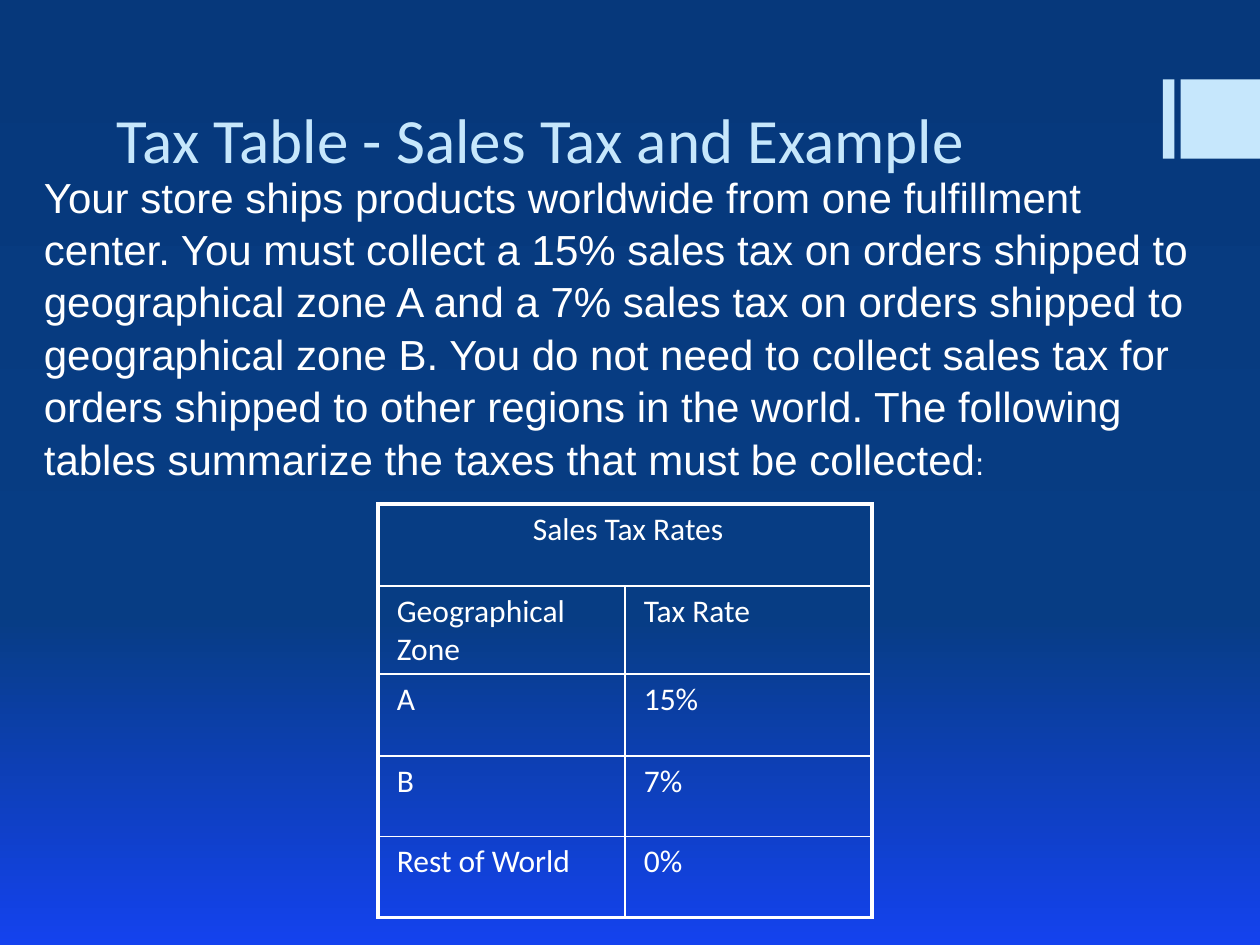
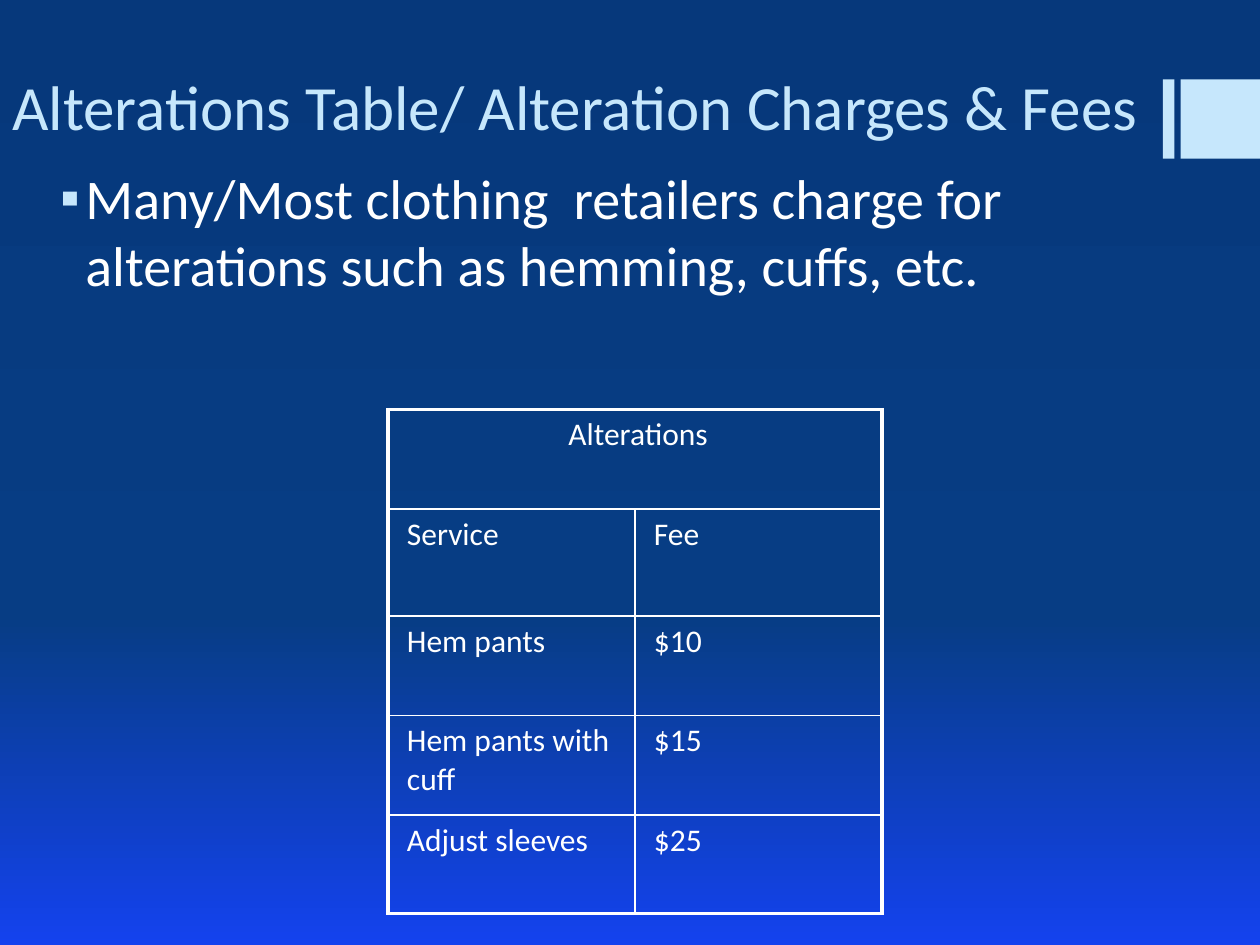
from dataclasses import dataclass

from lxml.etree import SubElement
from pptx import Presentation
from pptx.dml.color import RGBColor as Rgb
from pptx.enum.shapes import MSO_SHAPE as Preset
from pptx.enum.text import MSO_ANCHOR as Anchor, PP_ALIGN as Align
from pptx.oxml import parse_xml
from pptx.oxml.ns import nsdecls, qn
from pptx.util import Inches, Pt


@dataclass(frozen=True)
class Theme:
    """Colours, fonts, type sizes and line widths of the deck."""
    accent: str = "C6E7FC"
    text: str = "FFFFFF"
    gradient: tuple = ((0, "06387B"), (65, "073D84"), (100, "1442EE"))
    heading_font: str = "Calibri"
    prose_font: str = "Arial"
    title_size: int = 36
    bullet_size: int = 32
    prose_size: int = 24
    table_size: int = 18
    outer_border: float = 2.25
    inner_border: float = 1


THEME = Theme()


def style_run(run, size, color=THEME.text, font=THEME.heading_font):
    """Give a run its font, size and colour."""
    run.font.name = font
    run.font.size = Pt(size)
    run.font.color.rgb = Rgb.from_string(color)


def paint_background(slide):
    """Fill the slide with the vertical three-stop gradient."""
    fill = slide.background.fill
    fill.gradient()
    fill.gradient_angle = 270
    stops = next(slide.element.iter(qn("a:gsLst")))
    for stop in list(stops):
        stops.remove(stop)
    for percent, color in THEME.gradient:
        stop = SubElement(stops, qn("a:gs"), pos=str(percent * 1000))
        SubElement(stop, qn("a:srgbClr"), val=color)


def add_accent_bars(slide):
    """Draw the narrow and the wide bar at the right edge."""
    for left, width in ((9.23, 0.09), (9.37, 0.63)):
        bar = slide.shapes.add_shape(Preset.RECTANGLE, Inches(left), Inches(0.63),
                                     Inches(width), Inches(0.63))
        bar.shadow.inherit = False
        bar.fill.solid()
        bar.fill.fore_color.rgb = Rgb.from_string(THEME.accent)
        bar.line.fill.background()


def add_text_frame(slide, area, anchor):
    """Add a wrapping text box and return its frame."""
    frame = slide.shapes.add_textbox(*map(Inches, area)).text_frame
    frame.word_wrap = True
    frame.vertical_anchor = anchor
    return frame


def start_slide(deck, title, title_area):
    """Add a slide with background, bars and title."""
    slide = deck.slides.add_slide(deck.slide_layouts[6])
    paint_background(slide)
    add_accent_bars(slide)
    frame = add_text_frame(slide, title_area, Anchor.BOTTOM)
    frame.margin_bottom = Inches(0.02)
    frame.text = title
    style_run(frame.paragraphs[0].runs[0], THEME.title_size, THEME.accent)
    return slide


def add_prose(slide, area, sentence, ending):
    """Add body prose with a smaller closing mark."""
    paragraph = add_text_frame(slide, area, Anchor.MIDDLE).paragraphs[0]
    paragraph.line_spacing = 1.04
    for words, size in ((sentence, THEME.prose_size), (ending, THEME.table_size)):
        run = paragraph.add_run()
        run.text = words
        style_run(run, size, font=THEME.prose_font)


def add_bullet(slide, area, statement):
    """Add a statement with a square accent bullet."""
    frame = add_text_frame(slide, area, Anchor.TOP)
    frame.text = statement
    paragraph = frame.paragraphs[0]
    layout = paragraph._p.get_or_add_pPr()
    layout.set("marL", str(Inches(0.25)))
    layout.set("indent", str(Inches(-0.2)))
    color = SubElement(layout, qn("a:buClr"))
    SubElement(color, qn("a:srgbClr"), val=THEME.accent)
    SubElement(layout, qn("a:buFont"), typeface="Arial")
    SubElement(layout, qn("a:buChar"), char="▪")
    style_run(paragraph.runs[0], THEME.bullet_size)


def set_borders(cell, outer_sides):
    """Draw all four cell borders, heavier on the outer sides."""
    properties = cell._tc.get_or_add_tcPr()
    for position, side in enumerate("LRTB"):
        weight = THEME.outer_border if side in outer_sides else THEME.inner_border
        border = parse_xml(
            f'<a:ln{side} {nsdecls("a")} w="{Pt(weight)}"><a:solidFill>'
            f'<a:srgbClr val="{THEME.text}"/></a:solidFill></a:ln{side}>')
        properties.insert(position, border)


def add_rate_table(slide, left, top, heading, rows, heights):
    """Add a two-column table under a merged heading row."""
    column_width = 1.96
    grid = [(heading, ""), *rows]
    table = slide.shapes.add_table(len(grid), 2, Inches(left), Inches(top),
                                   Inches(2 * column_width), Inches(sum(heights))).table
    table.first_row = table.horz_banding = False
    for column in table.columns:
        column.width = Inches(column_width)
    table.cell(0, 0).merge(table.cell(0, 1))
    for r, (entries, height) in enumerate(zip(grid, heights)):
        table.rows[r].height = Inches(height)
        for c, entry in enumerate(entries):
            cell = table.cell(r, c)
            cell.fill.background()
            cell.margin_left = Inches(0.15)
            outer = "LR" if r == 0 else "LR"[c]
            outer += "T" if r == 0 else "B" if r == len(grid) - 1 else ""
            set_borders(cell, outer)
            if entry:
                cell.text_frame.text = entry
                style_run(cell.text_frame.paragraphs[0].runs[0], THEME.table_size)
    table.cell(0, 0).text_frame.paragraphs[0].alignment = Align.CENTER


def build_sales_tax(deck):
    """Build the sales tax slide."""
    slide = start_slide(deck, "Tax Table - Sales Tax and Example", (0.83, 0.5, 8, 0.92))
    add_prose(slide, (0.25, 1.33, 9.42, 2.52),
              "Your store ships products worldwide from one fulfillment center. "
              "You must collect a 15% sales tax on orders shipped to geographical "
              "zone A and a 7% sales tax on orders shipped to geographical zone B. "
              "You do not need to collect sales tax for orders shipped to other "
              "regions in the world. The following tables summarize the taxes that "
              "must be collected", ":")
    rates = [("Geographical Zone", "Tax Rate"), ("A", "15%"), ("B", "7%"),
             ("Rest of World", "0%")]
    add_rate_table(slide, 3, 4, "Sales Tax Rates", rates, (0.65, 0.7, 0.65, 0.64, 0.64))


def build_alterations(deck):
    """Build the alteration fees slide."""
    slide = start_slide(deck, "Alterations Table/ Alteration Charges & Fees",
                        (0, 0.33, 10, 0.83))
    add_bullet(slide, (0.33, 1.25, 9.33, 6.25),
               "Many/Most clothing  retailers charge for alterations such as "
               "hemming, cuffs, etc.")
    fees = [("Service", "Fee"), ("Hem pants", "$10"), ("Hem pants with cuff", "$15"),
            ("Adjust sleeves", "$25")]
    add_rate_table(slide, 3.08, 3.25, "Alterations", fees, (0.79, 0.85, 0.79, 0.79, 0.78))


def main():
    """Build and save the deck."""
    deck = Presentation()
    deck.slide_width, deck.slide_height = Inches(10), Inches(7.5)
    build_sales_tax(deck)
    build_alterations(deck)
    deck.save("out.pptx")


if __name__ == "__main__":
    main()
